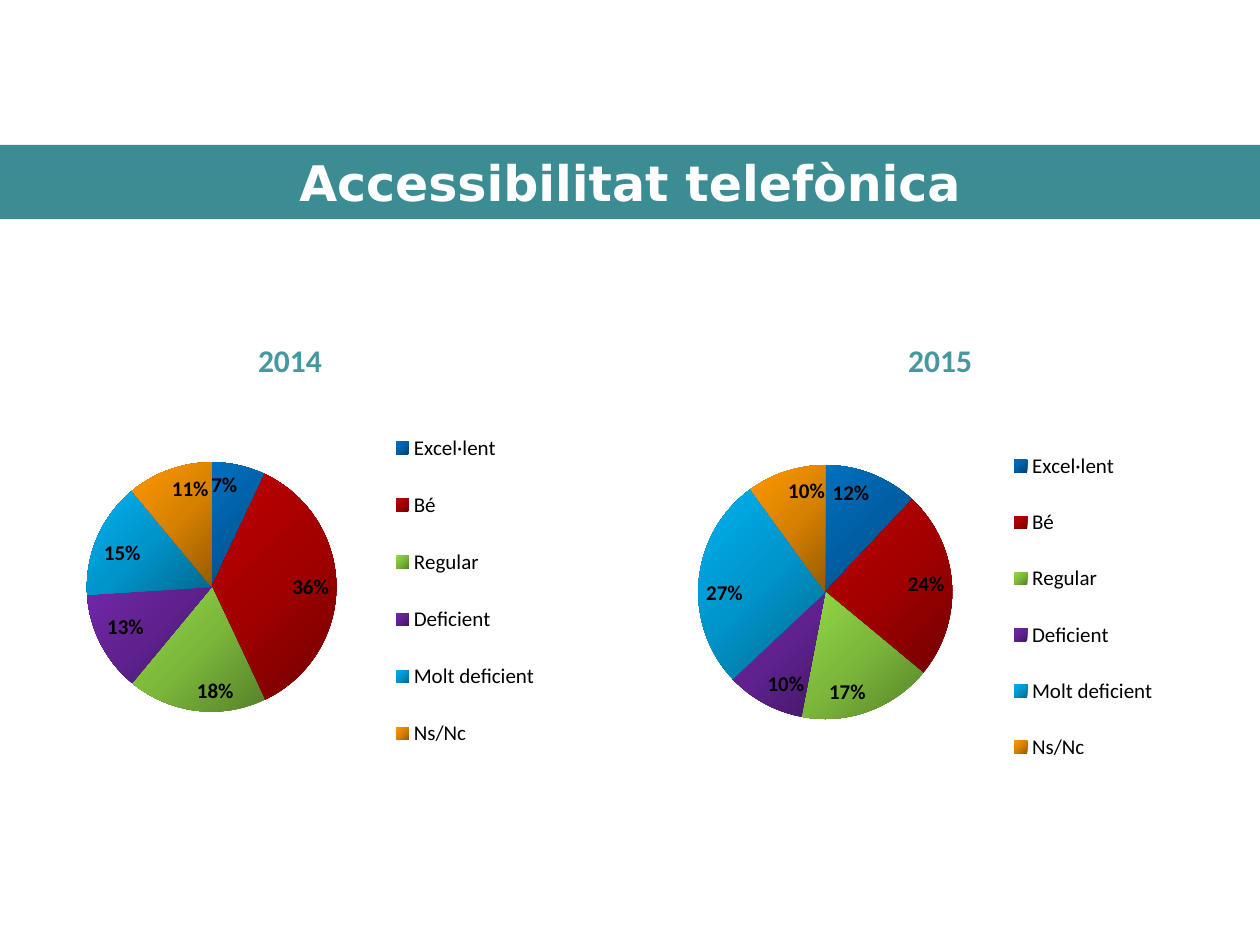
from copy import deepcopy

from lxml import etree
from pptx import Presentation
from pptx.chart.data import CategoryChartData
from pptx.dml.color import RGBColor
from pptx.enum.chart import XL_CHART_TYPE, XL_LABEL_POSITION, XL_LEGEND_POSITION
from pptx.enum.text import MSO_ANCHOR, MSO_AUTO_SIZE, PP_ALIGN
from pptx.oxml.ns import qn
from pptx.util import Inches, Pt

# Each answer with its gradient, from dark to light
ANSWERS = {
    "Excel·lent": ("004272", "005EA2", "0070C0"),
    "Bé": ("720000", "A20000", "C00000"),
    "Regular": ("57812A", "7BB73B", "92DA46"),
    "Deficient": ("431764", "5F218E", "7128A8"),
    "Molt deficient": ("00688E", "0094CA", "00B0F0"),
    "Ns/Nc": ("975B00", "D78100", "FF9900"),
}


def rgb(value):
    return RGBColor.from_string(value)


def set_font(font, size, name="Calibri", color="000000", bold=False):
    font.size = Pt(size)
    font.name = name
    font.bold = bold
    font.color.rgb = rgb(color)


def write_text(tf, text, align=PP_ALIGN.LEFT, **fmt):
    p = tf.paragraphs[0]
    p.alignment = align
    r = p.add_run()
    r.text = text
    set_font(r.font, **fmt)


def add_title(s, text):
    sp = s.shapes.title
    sp.left, sp.top = Inches(0), Inches(1.15)
    sp.width, sp.height = Inches(10), Inches(0.59)
    sp.fill.solid()
    sp.fill.fore_color.rgb = rgb("3C8C93")
    tf = sp.text_frame
    tf.auto_size = MSO_AUTO_SIZE.NONE
    tf.vertical_anchor = MSO_ANCHOR.MIDDLE
    write_text(tf, text, PP_ALIGN.CENTER, size=28, name="DejaVu Sans",
               color="FFFFFF", bold=True)


def add_year(s, text, left, width):
    sp = s.shapes.add_textbox(Inches(left), Inches(2.66), Inches(width), Inches(0.4))
    tf = sp.text_frame
    tf.word_wrap = True
    tf.auto_size = MSO_AUTO_SIZE.SHAPE_TO_FIT_TEXT
    write_text(tf, text, size=18, color="4597A0", bold=True)


def set_layout(parent, x, y, w, h, inner=False):
    """Place a plot area or legend by fractions of the chart."""
    for old in parent.findall(qn("c:layout")):
        parent.remove(old)
    layout = etree.Element(qn("c:layout"))
    manual = etree.SubElement(layout, qn("c:manualLayout"))
    values = {"xMode": "edge", "yMode": "edge", "x": x, "y": y, "w": w, "h": h}
    if inner:
        values = {"layoutTarget": "inner", **values}
    for tag, value in values.items():
        etree.SubElement(manual, qn(f"c:{tag}")).set("val", str(value))
    position = parent.find(qn("c:legendPos"))
    if position is None:
        parent.insert(0, layout)
    else:
        position.addnext(layout)


def color_slices(chart):
    points = chart.plots[0].series[0].points
    for i, colors in enumerate(ANSWERS.values()):
        fill = points[i].format.fill
        fill.gradient()
        fill.gradient_angle = 135
        # A new gradient has two stops; add the middle one
        stops = chart.element.findall(".//" + qn("a:gsLst"))[-1]
        stops.insert(1, deepcopy(stops[0]))
        for stop, color, position in zip(fill.gradient_stops, colors, (0, 0.5, 1)):
            stop.color.rgb = rgb(color)
            stop.position = position


def add_pie(s, values, left, top, width, height, legend_top):
    data = CategoryChartData()
    data.categories = list(ANSWERS)
    data.add_series("Series 1", values)
    chart = s.shapes.add_chart(XL_CHART_TYPE.PIE, Inches(left), Inches(top),
                               Inches(width), Inches(height), data).chart
    chart.has_title = False
    set_font(chart.font, 18, "Arial")
    set_layout(chart.element.find(".//" + qn("c:plotArea")),
               0.155, 0.108, 0.445, 0.77, inner=True)
    color_slices(chart)

    # Legend
    chart.has_legend = True
    legend = chart.legend
    legend.position = XL_LEGEND_POSITION.RIGHT
    legend.include_in_layout = False
    set_font(legend.font, 12)
    set_layout(chart.element.find(".//" + qn("c:legend")), 0.68, legend_top, 0.3, 0.68)

    # Percentages
    plot = chart.plots[0]
    plot.has_data_labels = True
    labels = plot.data_labels
    labels.show_percentage = True
    labels.show_value = False
    labels.number_format = "0%"
    labels.number_format_is_linked = False
    labels.position = XL_LABEL_POSITION.INSIDE_END
    set_font(labels.font, 12, bold=True)


def main():
    prs = Presentation()
    prs.slide_width, prs.slide_height = Inches(10), Inches(7.5)
    s = prs.slides.add_slide(prs.slide_layouts[5])
    add_title(s, "Accessibilitat telefònica")
    add_pie(s, (7, 36, 18, 13, 15, 11), 0, 2.5, 4.45, 4.38, legend_top=0.16)
    add_pie(s, (12, 24, 17, 10, 27, 10), 4.84, 2.58, 4.53, 4.3, legend_top=0.18)
    add_year(s, "2014", 1.95, 0.86)
    add_year(s, "2015", 7.11, 0.78)
    prs.save("out.pptx")


if __name__ == "__main__":
    main()
